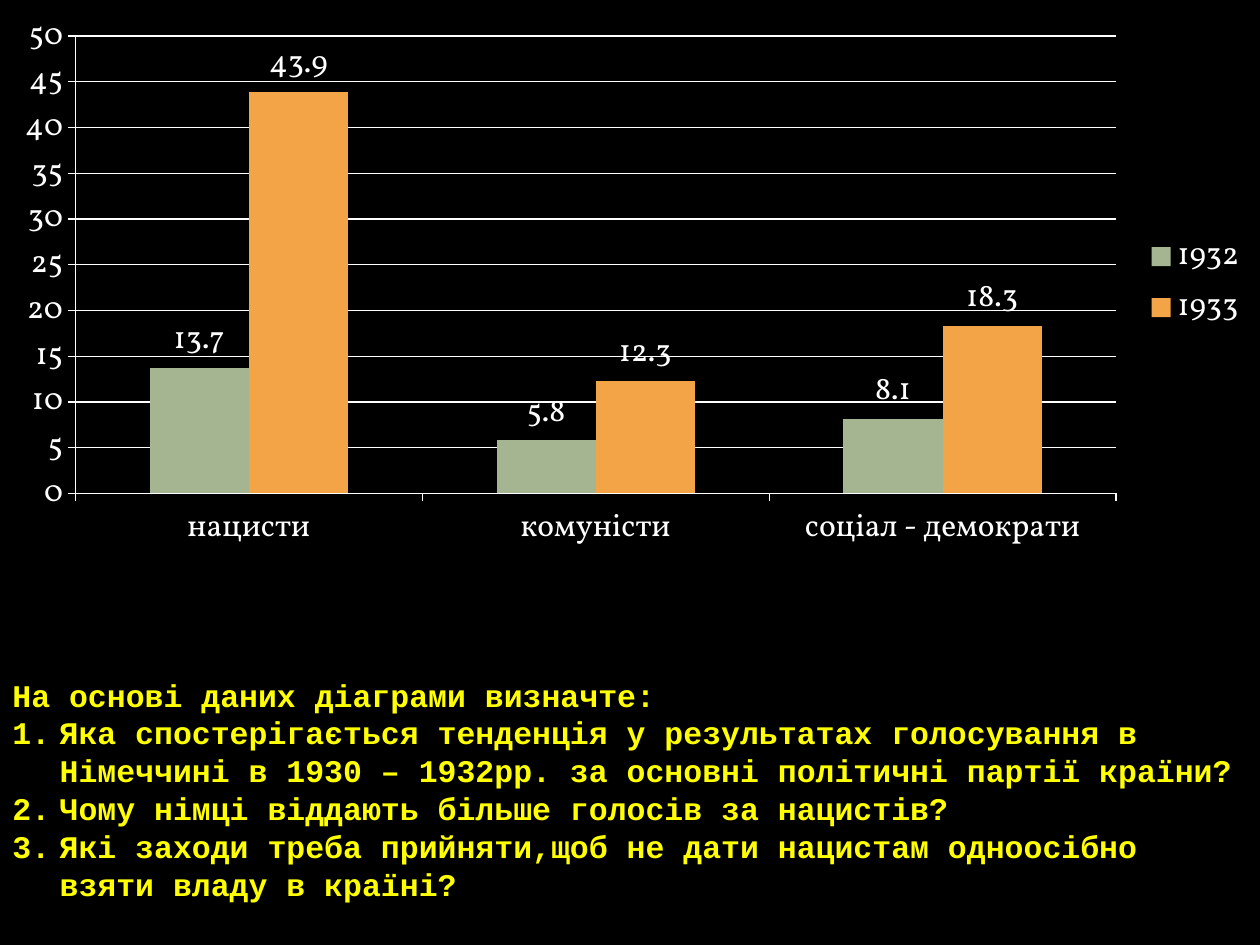
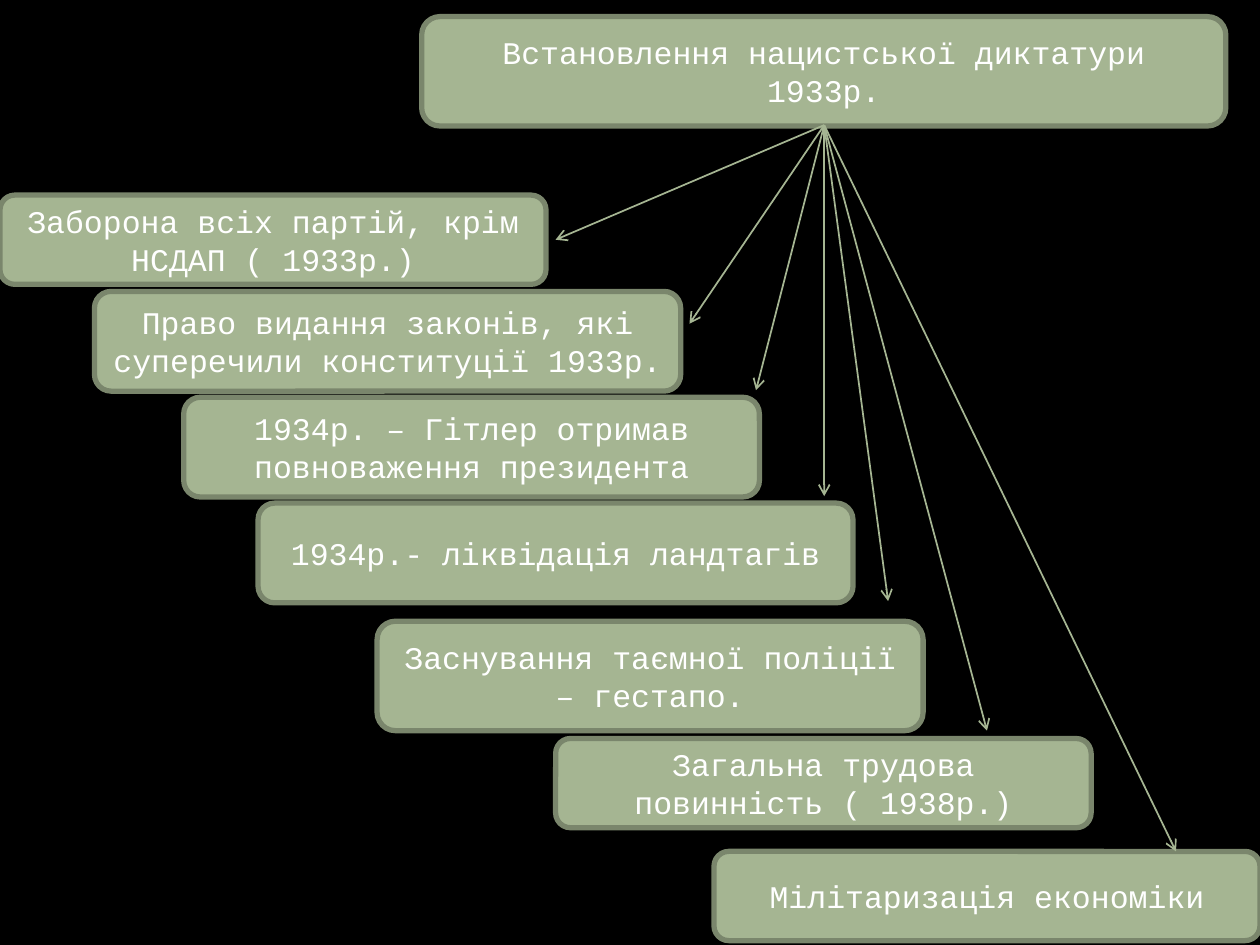
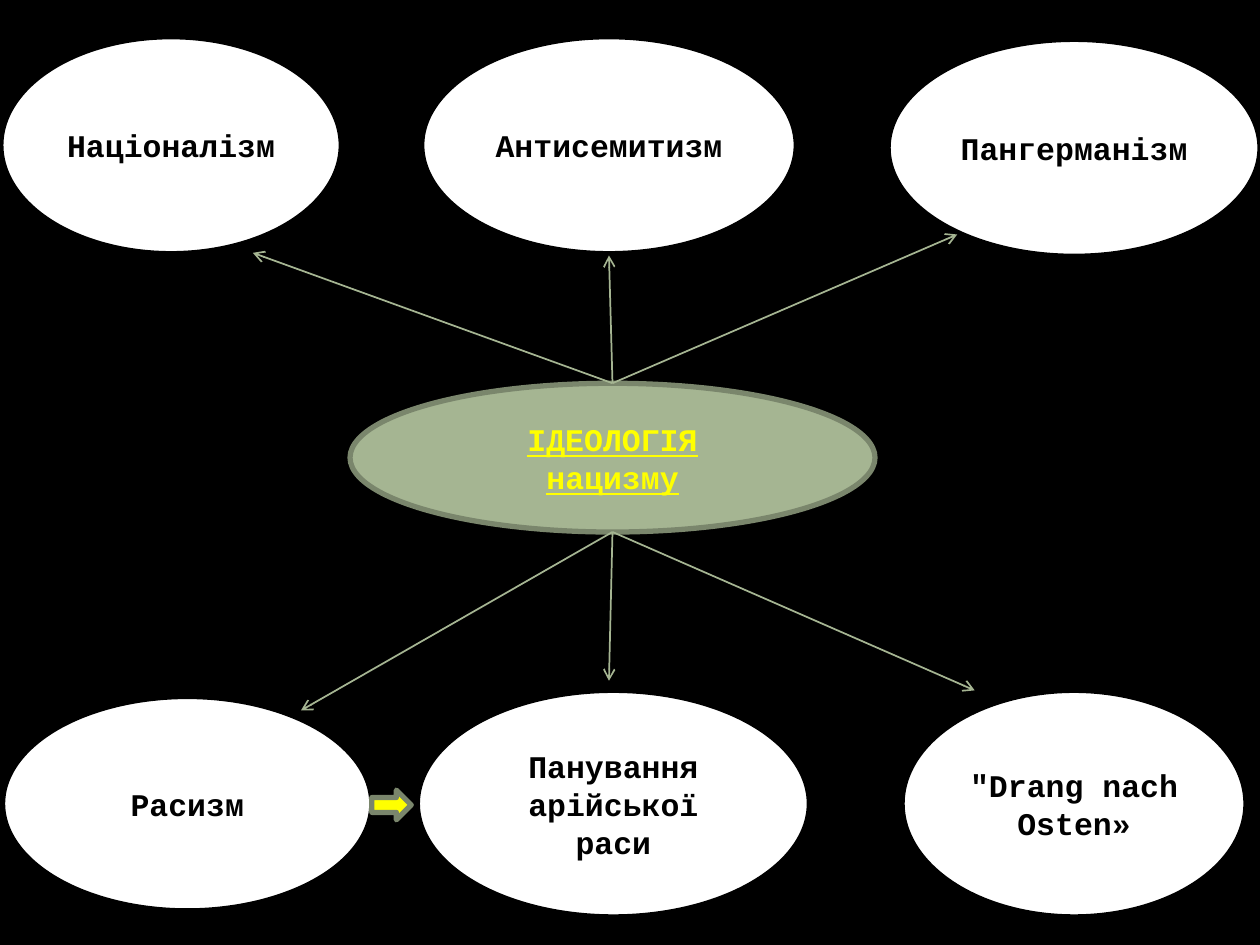
from lxml import etree
from pptx import Presentation
from pptx import util as u
from pptx.chart.data import CategoryChartData
from pptx.dml.color import RGBColor
from pptx.enum import chart as ch, shapes, text
from pptx.oxml.ns import qn

BLACK = RGBColor(0x00, 0x00, 0x00)
WHITE = RGBColor(0xFF, 0xFF, 0xFF)
YELLOW = RGBColor(0xFF, 0xFF, 0x00)
GREEN = RGBColor(0xA5, 0xB5, 0x92)
DARK_GREEN = RGBColor(0x7A, 0x86, 0x6C)
ORANGE = RGBColor(0xF3, 0xA4, 0x47)

BODY = {"name": "Courier New", "size": u.Pt(18)}
BOLD = {**BODY, "bold": True}
HEADING = {**BOLD, "underline": True}
CHART_TEXT = {"name": "Vollkorn", "size": u.Pt(18)}

VOTES = {"1932": (GREEN, (13.7, 5.8, 8.1)), "1933": (ORANGE, (43.9, 12.3, 18.3))}
PARTIES = ("нацисти", "комуністи", "соціал - демократи")

QUESTIONS = (
    "Яка спостерігається тенденція у результатах голосування в Німеччині "
    "в 1930 – 1932рр. за основні політичні партії країни?",
    "Чому німці віддають більше голосів за нацистів?",
    "Які заходи треба прийняти,щоб не дати нацистам одноосібно взяти владу в країні?",
)

STEPS = (
    ("Заборона всіх партій, крім НСДАП ( 1933р.)", (0, 111.5, 312, 51), (317.5, 137)),
    ("Право видання законів, які суперечили конституції 1933р.",
     (54, 166.5, 335, 57), (394, 185)),
    ("1934р. – Гітлер отримав повноваження президента",
     (105, 227, 329, 57), (432, 223)),
    ("1934р.- ліквідація ландтагів", (147.5, 287.5, 340, 57), (471, 283.5)),
    ("Заснування таємної поліції – гестапо.", (215.5, 355, 312, 62.5), (507.5, 343.5)),
    ("Загальна трудова повинність ( 1938р.)", (317.5, 422, 306, 51), (564, 417.5)),
    ("Мілітаризація економіки", (408, 486.5, 312, 51), (672, 486.5)),
)

IDEAS_ABOVE = (
    ("Націоналізм", (0.5, 21, 194.5, 124), (144.5, 144.5)),
    ("Антисемитизм", (241, 21, 214, 124), (348, 146)),
    ("Пангерманізм", (507.5, 22.5, 212.5, 124), (547, 134)),
)
IDEAS_BELOW = (
    ("Расизм", (1.5, 398, 211, 122.5), (172, 406)),
    ("Панування арійської раси", (238.5, 394.5, 224, 129.5), (348, 389)),
    ("\"Drang nach Osten»", (515.5, 394.5, 196.5, 129.5), (557, 394.5)),
)


def pts(values):
    return [u.Pt(v) for v in values]


def set_font(font, fmt, color):
    for name, value in fmt.items():
        setattr(font, name, value)
    font.color.rgb = color


def set_line(line, color, width):
    line.color.rgb = color
    line.width = u.Pt(width)


def new_slide(prs):
    s = prs.slides.add_slide(prs.slide_layouts[6])
    s.background.fill.solid()
    s.background.fill.fore_color.rgb = BLACK
    return s


def add_node(s, kind, box, lines=(), fill=GREEN, line=DARK_GREEN, fmt=BODY, color=WHITE):
    sp = s.shapes.add_shape(kind, *pts(box))
    sp.shadow.inherit = False
    sp.fill.solid()
    sp.fill.fore_color.rgb = fill
    set_line(sp.line, line, 3)
    tf = sp.text_frame
    tf.word_wrap = True
    for i, line_text in enumerate(lines):
        p = tf.add_paragraph() if i else tf.paragraphs[0]
        p.alignment = text.PP_ALIGN.CENTER
        r = p.add_run()
        r.text = line_text
        set_font(r.font, fmt, color)
    return sp


def add_arrow(s, start, end):
    c = s.shapes.add_connector(shapes.MSO_CONNECTOR.STRAIGHT, *pts(start + end))
    set_line(c.line, GREEN, 1)
    etree.SubElement(c.line._get_or_add_ln(), qn("a:tailEnd"), type="arrow")
    etree.SubElement(c._element.spPr, qn("a:effectLst"))


def add_votes_chart(s, box):
    data = CategoryChartData()
    data.categories = PARTIES
    for year, (_, values) in VOTES.items():
        data.add_series(year, values)
    chart = s.shapes.add_chart(ch.XL_CHART_TYPE.COLUMN_CLUSTERED, *pts(box), data).chart
    set_font(chart.font, CHART_TEXT, WHITE)
    chart.has_title = False
    chart.has_legend = True
    chart.legend.position = ch.XL_LEGEND_POSITION.RIGHT
    chart.legend.include_in_layout = False

    for axis in (chart.category_axis, chart.value_axis):
        axis.major_tick_mark = ch.XL_TICK_MARK.OUTSIDE
        set_line(axis.format.line, WHITE, 0.75)
    axis = chart.value_axis
    axis.minimum_scale, axis.maximum_scale, axis.major_unit = 0, 50, 5
    axis.has_major_gridlines = True
    set_line(axis.major_gridlines.format.line, WHITE, 0.75)

    plot = chart.plots[0]
    plot.gap_width, plot.overlap = 150, 0
    plot.vary_by_categories = False
    for series, (color, _) in zip(plot.series, VOTES.values()):
        series.format.fill.solid()
        series.format.fill.fore_color.rgb = color
        labels = series.data_labels
        labels.show_value = True
        labels.position = ch.XL_LABEL_POSITION.OUTSIDE_END
        set_font(labels.font, CHART_TEXT, WHITE)


def add_questions(s, box, heading, questions):
    tf = s.shapes.add_textbox(*pts(box)).text_frame
    tf.word_wrap = True
    tf.auto_size = text.MSO_AUTO_SIZE.SHAPE_TO_FIT_TEXT
    for i, line_text in enumerate((heading, *questions)):
        p = tf.add_paragraph() if i else tf.paragraphs[0]
        if i:
            pPr = p._p.get_or_add_pPr()
            pPr.set("marL", str(u.Pt(27)))
            pPr.set("indent", str(-u.Pt(27)))
            etree.SubElement(pPr, qn("a:buFont"), typeface="+mj-lt")
            etree.SubElement(pPr, qn("a:buAutoNum"), type="arabicPeriod")
        r = p.add_run()
        r.text = line_text
        set_font(r.font, BOLD, YELLOW)


def votes_slide(prs):
    s = new_slide(prs)
    add_votes_chart(s, (0, 1.5, 720, 319.5))
    add_questions(s, (0, 382.5, 720, 157.5), "На основі даних діаграми визначте:", QUESTIONS)


def dictatorship_slide(prs):
    s = new_slide(prs)
    kind = shapes.MSO_SHAPE.ROUNDED_RECTANGLE
    add_node(s, kind, (241, 9.5, 459.5, 62.5),
             ("Встановлення нацистської диктатури", "1933р."))
    for label, box, _ in STEPS:
        add_node(s, kind, box, (label,))
    for _, _, end in STEPS:
        add_arrow(s, (471, 71.5), end)


def ideology_slide(prs):
    s = new_slide(prs)
    oval = shapes.MSO_SHAPE.OVAL
    add_node(s, oval, (200, 219, 300, 85), ("ІДЕОЛОГІЯ", "нацизму"),
             fmt=HEADING, color=YELLOW)
    for label, box, _ in IDEAS_ABOVE + IDEAS_BELOW:
        add_node(s, oval, box, (label,), WHITE, BLACK, BOLD, BLACK)
    add_node(s, shapes.MSO_SHAPE.RIGHT_ARROW, (212.5, 451.5, 22.5, 17), fill=YELLOW)
    for start, ideas in (((350, 219), IDEAS_ABOVE), ((350, 304), IDEAS_BELOW)):
        for _, _, end in ideas:
            add_arrow(s, start, end)


def main():
    prs = Presentation()
    prs.slide_width, prs.slide_height = u.Pt(720), u.Pt(540)
    votes_slide(prs)
    dictatorship_slide(prs)
    ideology_slide(prs)
    prs.save("out.pptx")


if __name__ == "__main__":
    main()
